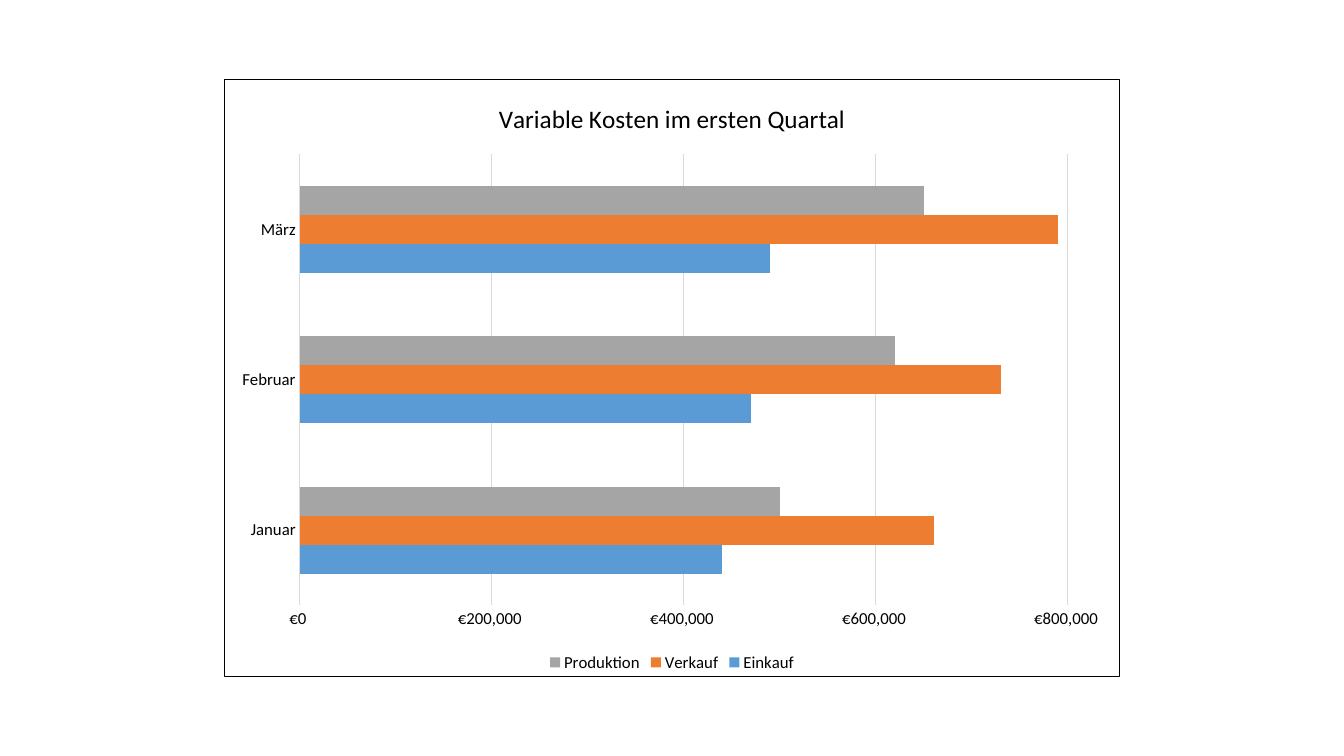
"""Build a slide with a bordered bar chart of variable costs in the first quarter."""
from dataclasses import dataclass

from pptx import Presentation
from pptx.chart.data import CategoryChartData
from pptx.dml.color import RGBColor
from pptx.enum.chart import XL_CHART_TYPE, XL_LEGEND_POSITION, XL_TICK_MARK
from pptx.oxml import parse_xml
from pptx.oxml.ns import nsdecls
from pptx.util import Inches, Pt


@dataclass(frozen=True)
class Theme:
    """Hold the colours, font and type sizes."""
    font: str = "Calibri"
    text: str = "000000"
    paper: str = "FFFFFF"
    grid: str = "D9D9D9"
    title_size: float = 18
    label_size: float = 12
    line_width: float = 0.75


THEME = Theme()
TITLE = "Variable Kosten im ersten Quartal"
MONTHS = ("Januar", "Februar", "März")
COSTS = (
    ("Einkauf", (440000, 470000, 490000), "5B9BD5"),
    ("Verkauf", (660000, 730000, 790000), "ED7D31"),
    ("Produktion", (500000, 620000, 650000), "A5A5A5"),
)
EURO_FORMAT = '"€"#,##0_);[Red]\\("€"#,##0\\)'


def style_font(font, size):
    """Apply the theme font at the given size."""
    font.name = THEME.font
    font.size = Pt(size)
    font.bold = False
    font.color.rgb = RGBColor.from_string(THEME.text)


def style_line(line, colour):
    """Draw a thin line in the given colour."""
    line.color.rgb = RGBColor.from_string(colour)
    line.width = Pt(THEME.line_width)


def style_axis(axis):
    """Remove tick marks and set the label font."""
    axis.major_tick_mark = axis.minor_tick_mark = XL_TICK_MARK.NONE
    style_font(axis.tick_labels.font, THEME.label_size)


def add_border(chart):
    """Fill the chart area and frame it."""
    frame = parse_xml(
        f'<c:spPr {nsdecls("c", "a")}>'
        f'<a:solidFill><a:srgbClr val="{THEME.paper}"/></a:solidFill>'
        f'<a:ln w="{Pt(THEME.line_width)}"><a:solidFill>'
        f'<a:srgbClr val="{THEME.text}"/></a:solidFill></a:ln></c:spPr>'
    )
    chart.element.chart.addnext(frame)


def add_cost_chart(page, left, top, width, height):
    """Place the clustered bar chart with its series."""
    data = CategoryChartData(number_format=EURO_FORMAT)
    data.categories = MONTHS
    for name, values, _ in COSTS:
        data.add_series(name, values)
    chart = page.shapes.add_chart(
        XL_CHART_TYPE.BAR_CLUSTERED, left, top, width, height, data
    ).chart
    style_font(chart.font, THEME.label_size)
    plot = chart.plots[0]
    plot.gap_width = 219
    plot.vary_by_categories = False
    for series, (_, _, colour) in zip(plot.series, COSTS):
        series.format.fill.solid()
        series.format.fill.fore_color.rgb = RGBColor.from_string(colour)
    add_border(chart)
    return chart


def format_axes(chart):
    """Set the scale, gridlines and axis lines."""
    months, euros = chart.category_axis, chart.value_axis
    style_axis(months)
    style_axis(euros)
    style_line(months.format.line, THEME.grid)
    euros.format.line.fill.background()
    euros.minimum_scale, euros.maximum_scale = 0, 800000
    euros.major_unit = 200000
    euros.has_major_gridlines = True
    style_line(euros.major_gridlines.format.line, THEME.grid)
    euros.tick_labels.number_format = EURO_FORMAT
    euros.tick_labels.number_format_is_linked = False


def add_title_and_legend(chart):
    """Head the chart and put the legend below it."""
    chart.has_title = True
    chart.chart_title.include_in_layout = False
    paragraph = chart.chart_title.text_frame.paragraphs[0]
    paragraph.text = TITLE
    style_font(paragraph.runs[0].font, THEME.title_size)
    chart.has_legend = True
    chart.legend.position = XL_LEGEND_POSITION.BOTTOM
    chart.legend.include_in_layout = False
    style_font(chart.legend.font, THEME.label_size)


def main():
    """Create and save the deck."""
    deck = Presentation()
    deck.slide_width, deck.slide_height = Inches(13.33), Inches(7.5)
    page = deck.slides.add_slide(deck.slide_layouts[6])
    width, height = Inches(8.89), Inches(5.93)
    left = (deck.slide_width - width) // 2
    top = (deck.slide_height - height) // 2
    chart = add_cost_chart(page, left, top, width, height)
    format_axes(chart)
    add_title_and_legend(chart)
    deck.save("out.pptx")


if __name__ == "__main__":
    main()
